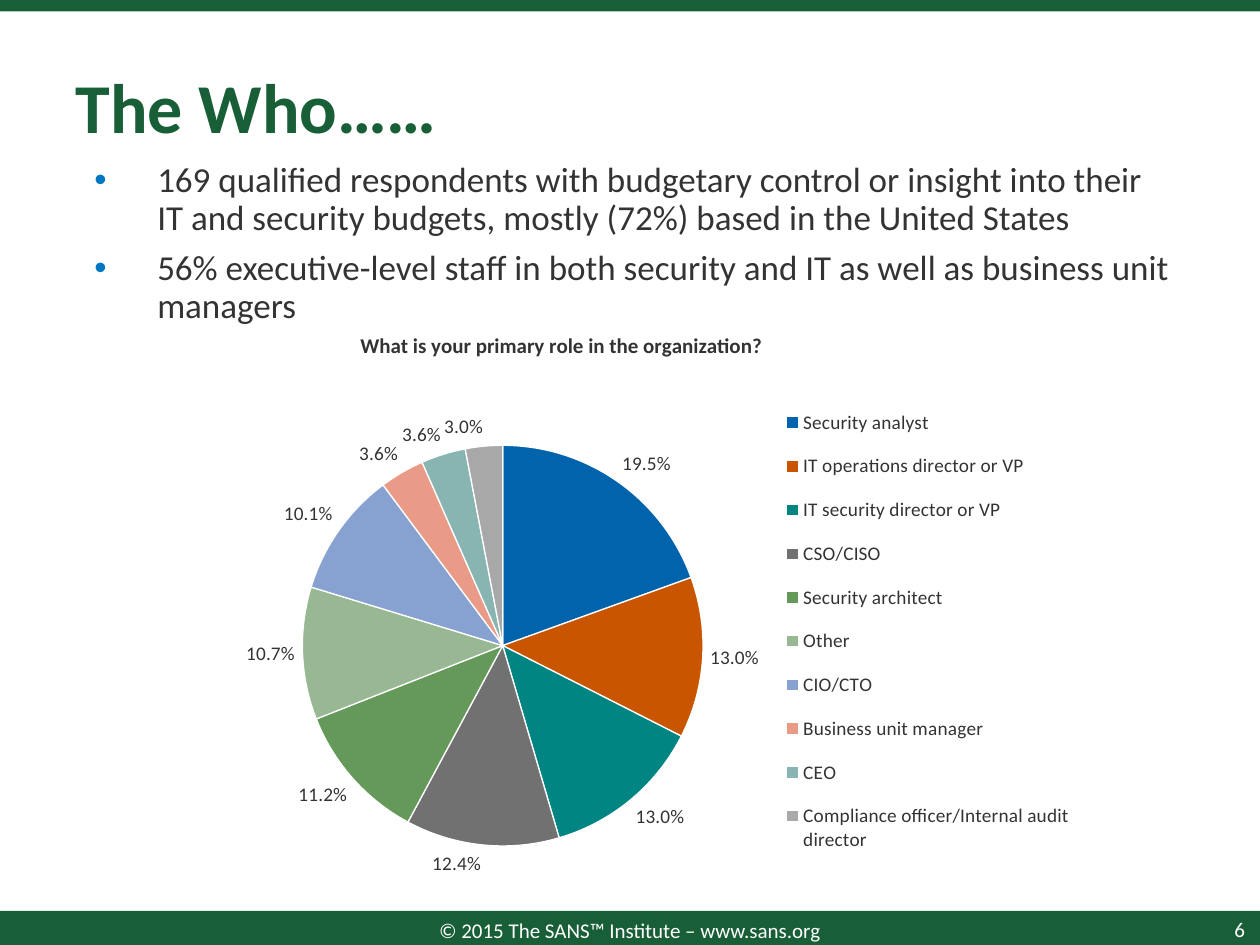
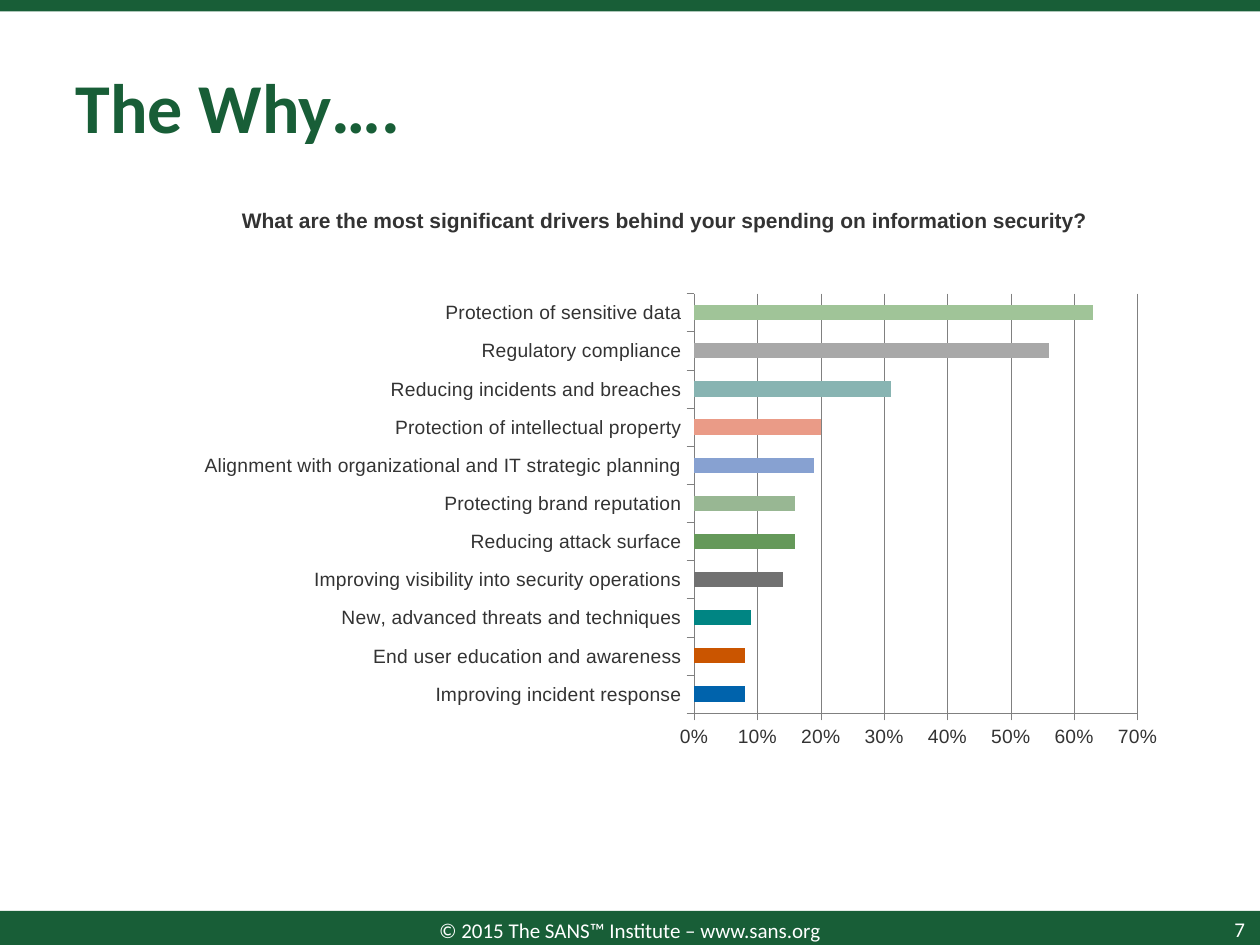
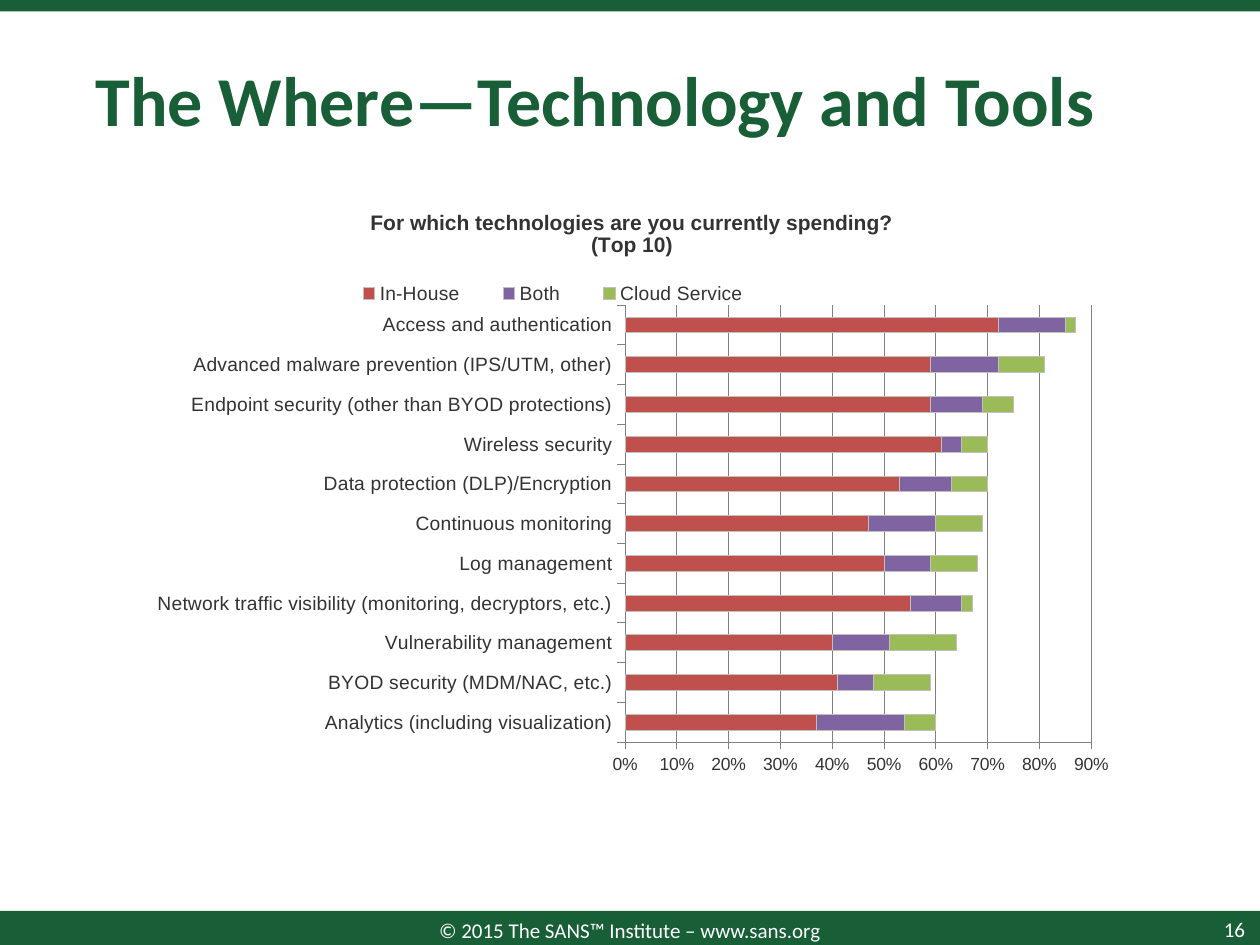
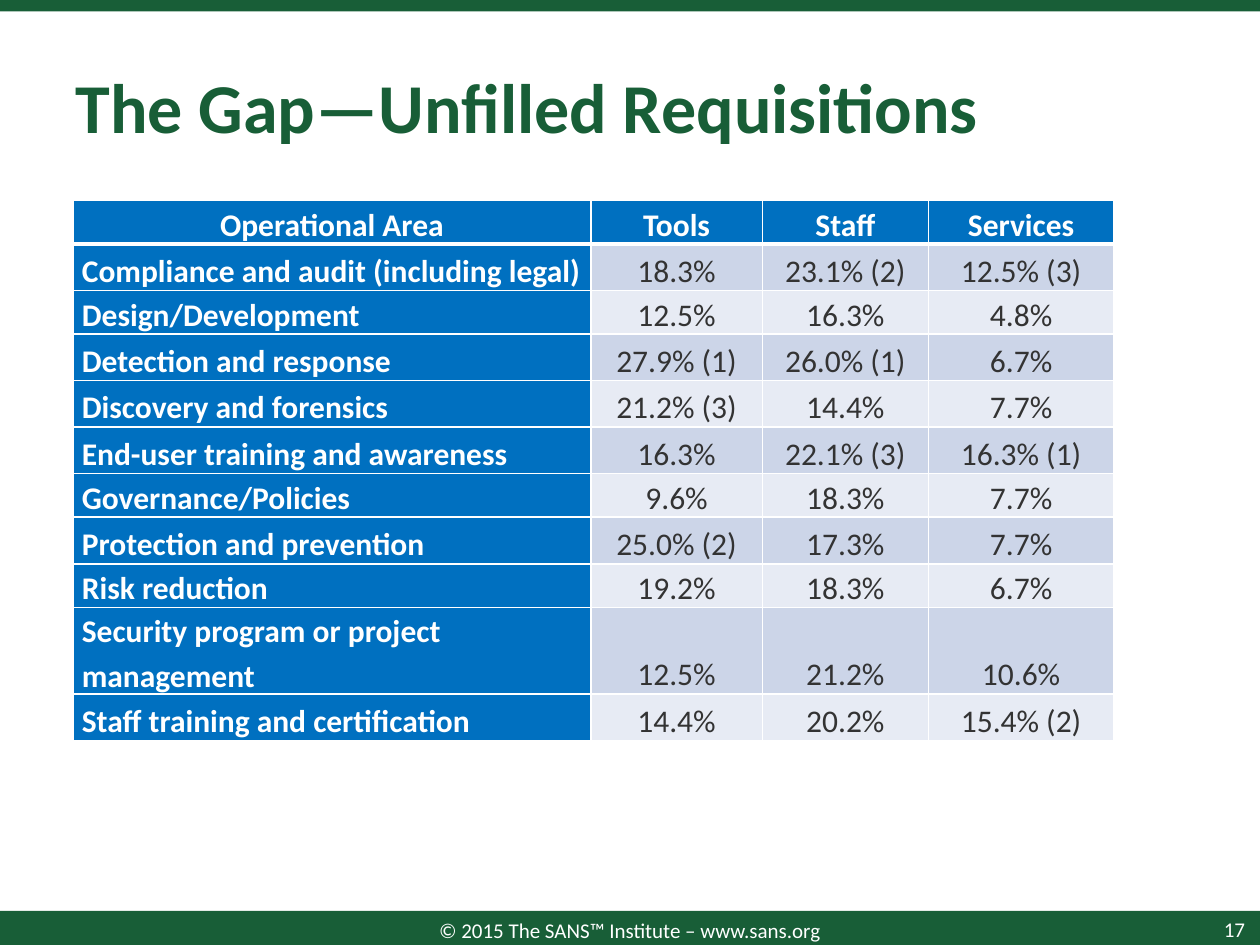
from dataclasses import dataclass
from typing import NamedTuple

from pptx import Presentation
from pptx import util as u
from pptx.chart.data import CategoryChartData
from pptx.dml.color import RGBColor
from pptx.enum import chart as charts
from pptx.enum import shapes, text
from pptx.oxml import parse_xml
from pptx.oxml.ns import nsdecls
from pptx.oxml.xmlchemy import OxmlElement

PX = 9144
GREEN = RGBColor(0x18, 0x5E, 0x37)
WHITE = RGBColor(0xFF, 0xFF, 0xFF)
INK = RGBColor(0x33, 0x33, 0x33)
BULLET_BLUE = RGBColor(0x00, 0x77, 0xC5)
TABLE_BLUE = RGBColor(0x00, 0x70, 0xC0)
ROW_FILLS = (RGBColor(0xCC, 0xD5, 0xE8), RGBColor(0xE7, 0xEB, 0xF4))
AXIS_GREY = RGBColor(0x80, 0x80, 0x80)
OUTLINE_GREY = RGBColor(0xC0, 0xC0, 0xC0)
STACK_COLOURS = tuple(map(RGBColor.from_string, ("C0504D", "8064A2", "9BBB59")))
POINT_COLOURS = tuple(map(RGBColor.from_string, (
    "0063AC", "CA5500", "008583", "717171", "65995A", "98B793",
    "87A1D1", "EA9B87", "88B4B2", "A8A8A8", "A0C498")))
FOOTER = "© 2015 The SANS™ Institute – www.sans.org"


class Box(NamedTuple):
    left: int
    top: int
    width: int = 0
    height: int = 0

    def emu(self) -> list[u.Emu]:
        return [u.Emu(value * PX) for value in self]


TITLE_BOX = Box(50, 30, 900, 107)


@dataclass
class ChartSpec:
    kind: charts.XL_CHART_TYPE
    box: Box
    plot_box: Box
    title: str
    title_box: Box
    font: str
    categories: tuple[str, ...]
    series: dict[str, tuple[float, ...]]
    legend_box: Box | None = None


def style(frame, size: float, colour: RGBColor, bold: bool = False,
          font: str = "Calibri", align=None) -> None:
    for para in frame.paragraphs:
        if align is not None:
            para.alignment = align
        for span in para.runs:
            span.font.size = u.Pt(size)
            span.font.name = font
            span.font.bold = bold
            span.font.color.rgb = colour


def add_text(page, box: Box, words: str, size: float, colour: RGBColor,
             align=text.PP_ALIGN.LEFT, anchor=text.MSO_ANCHOR.MIDDLE):
    frame = page.shapes.add_textbox(*box.emu()).text_frame
    frame.word_wrap = True
    frame.vertical_anchor = anchor
    frame.text = words
    style(frame, size, colour, align=align)
    return frame


def add_band(page, box: Box) -> None:
    band = page.shapes.add_shape(shapes.MSO_SHAPE.RECTANGLE, *box.emu())
    band.shadow.inherit = False
    band.fill.solid()
    band.fill.fore_color.rgb = GREEN
    band.line.fill.background()


def add_page(deck, title: str, number: int, title_box: Box = TITLE_BOX):
    page = deck.slides.add_slide(deck.slide_layouts[5])
    add_band(page, Box(0, 723, 1000, 27))
    add_band(page, Box(0, 0, 1000, 9))
    add_text(page, Box(305, 724, 390, 28), FOOTER, 12, WHITE, text.PP_ALIGN.CENTER)
    add_text(page, Box(904, 723, 94, 28), str(number), 12, WHITE, text.PP_ALIGN.RIGHT)
    holder = page.shapes.title
    holder.left, holder.top, holder.width, holder.height = title_box.emu()
    frame = holder.text_frame
    frame.text = title
    frame.auto_size = text.MSO_AUTO_SIZE.NONE
    frame.vertical_anchor = text.MSO_ANCHOR.MIDDLE
    style(frame, 40, GREEN, True, align=text.PP_ALIGN.LEFT)
    return page


def add_bullet(page, box: Box, words: str) -> None:
    frame = add_text(page, box, words, 20, INK, anchor=text.MSO_ANCHOR.TOP)
    para = frame.paragraphs[0]
    props = para._p.get_or_add_pPr()
    props.set("marL", str(50 * PX))
    props.set("indent", str(-50 * PX))
    props.append(parse_xml(
        f'<a:buClr {nsdecls("a")}><a:srgbClr val="{BULLET_BLUE}"/></a:buClr>'))
    props.append(parse_xml(f'<a:buFont {nsdecls("a")} typeface="Arial"/>'))
    props.append(parse_xml(f'<a:buChar {nsdecls("a")} char="•"/>'))
    para.line_spacing = 0.9


def place(element, part: Box, frame: Box) -> None:
    for old in element.xpath("c:layout"):
        element.remove(old)
    fractions = {
        "x": (part.left - frame.left) / frame.width,
        "y": (part.top - frame.top) / frame.height}
    if part.width:
        fractions |= {"w": part.width / frame.width, "h": part.height / frame.height}
    layout = OxmlElement("c:layout")
    manual = OxmlElement("c:manualLayout")
    layout.append(manual)
    settings = {"xMode": "edge", "yMode": "edge"} | fractions
    if element.tag.endswith("plotArea"):
        settings = {"layoutTarget": "inner"} | settings
    for name, value in settings.items():
        setting = OxmlElement(f"c:{name}")
        setting.set("val", str(value))
        manual.append(setting)
    before = element.xpath("c:tx | c:legendPos")
    if before:
        before[-1].addnext(layout)
    else:
        element.insert(0, layout)


def outline(line, colour: RGBColor, width: float) -> None:
    line.color.rgb = colour
    line.width = u.Pt(width)


def paint(item, colour: RGBColor) -> None:
    item.format.fill.solid()
    item.format.fill.fore_color.rgb = colour


def set_font(font, size: float, name: str) -> None:
    font.size = u.Pt(size)
    font.name = name
    font.color.rgb = INK


def add_chart(page, spec: ChartSpec):
    data = CategoryChartData(number_format="0%")
    data.categories = spec.categories
    for name, values in spec.series.items():
        data.add_series(name, values)
    chart = page.shapes.add_chart(spec.kind, *spec.box.emu(), data).chart
    set_font(chart.font, 10, spec.font)
    chart.has_title = True
    chart.chart_title.include_in_layout = False
    chart.chart_title.text_frame.text = spec.title
    style(chart.chart_title.text_frame, 12, INK, True, spec.font)
    root = chart._chartSpace
    place(root.xpath("c:chart/c:title")[0], spec.title_box, spec.box)
    place(root.xpath("c:chart/c:plotArea")[0], spec.plot_box, spec.box)
    chart.has_legend = spec.legend_box is not None
    if spec.legend_box:
        chart.legend.position = charts.XL_LEGEND_POSITION.RIGHT
        chart.legend.include_in_layout = False
        set_font(chart.legend.font, 11, spec.font)
        place(root.xpath("c:chart/c:legend")[0], spec.legend_box, spec.box)
    return chart


def paint_points(series) -> None:
    for index, _ in enumerate(series.values):
        paint(series.points[index], POINT_COLOURS[index])


def add_pie(page, spec: ChartSpec) -> None:
    plot = add_chart(page, spec).plots[0]
    plot.vary_by_categories = True
    series = plot.series[0]
    paint_points(series)
    for index, _ in enumerate(series.values):
        outline(series.points[index].format.line, WHITE, 0.75)
    plot.has_data_labels = True
    labels = plot.data_labels
    labels.show_value = True
    labels.show_percentage = False
    labels.number_format = "0.0%"
    labels.number_format_is_linked = False
    labels.position = charts.XL_LABEL_POSITION.OUTSIDE_END
    set_font(labels.font, 11, spec.font)


def add_bars(page, spec: ChartSpec, maximum: float, scale_size: float):
    chart = add_chart(page, spec)
    plot = chart.plots[0]
    plot.vary_by_categories = False
    plot.gap_width = 150
    for axis, size in ((chart.category_axis, 11), (chart.value_axis, scale_size)):
        axis.major_tick_mark = charts.XL_TICK_MARK.OUTSIDE
        axis.minor_tick_mark = charts.XL_TICK_MARK.NONE
        outline(axis.format.line, AXIS_GREY, 0.25)
        set_font(axis.tick_labels.font, size, spec.font)
    scale = chart.value_axis
    scale.minimum_scale, scale.maximum_scale, scale.major_unit = 0, maximum, 0.1
    scale.has_major_gridlines = True
    outline(scale.major_gridlines.format.line, AXIS_GREY, 0.25)
    scale.tick_labels.number_format = "0%"
    scale.tick_labels.number_format_is_linked = False
    return plot


def border_cell(cell, bottom_width: float) -> None:
    props = cell._tc.get_or_add_tcPr()
    for side in "LRTB":
        width = u.Pt(bottom_width if side == "B" else 1)
        props.append(parse_xml(
            f'<a:ln{side} {nsdecls("a")} w="{width}"><a:solidFill>'
            f'<a:srgbClr val="{WHITE}"/></a:solidFill></a:ln{side}>'))


def add_gap_table(page, box: Box, widths: tuple[int, ...], heights: tuple[int, ...],
                  rows: tuple[tuple[str, ...], ...]) -> None:
    table = page.shapes.add_table(len(rows), len(widths), *box.emu()).table
    for column, width in zip(table.columns, widths):
        column.width = u.Emu(width * PX)
    for row, height in zip(table.rows, heights):
        row.height = u.Emu(height * PX)
    for r, row in enumerate(rows):
        for c, words in enumerate(row):
            cell = table.cell(r, c)
            is_header, is_area = r == 0, c == 0
            strong = is_header or is_area
            border_cell(cell, 3 if is_header else 1)
            cell.fill.solid()
            cell.fill.fore_color.rgb = TABLE_BLUE if strong else ROW_FILLS[(r - 1) % 2]
            cell.margin_left = cell.margin_right = u.Emu(7 * PX)
            cell.margin_top = cell.margin_bottom = 0
            cell.vertical_anchor = (
                text.MSO_ANCHOR.MIDDLE if is_header else text.MSO_ANCHOR.BOTTOM)
            cell.text_frame.text = words
            align = (text.PP_ALIGN.LEFT if is_area and not is_header
                     else text.PP_ALIGN.CENTER)
            style(cell.text_frame, 18, WHITE if strong else INK, strong, align=align)
            cell.text_frame.paragraphs[0].line_spacing = 1.15


ROLES = ChartSpec(
    charts.XL_CHART_TYPE.PIE, Box(175, 252, 681, 471), Box(240, 343, 318, 339),
    "What is your primary role in the organization?", Box(283, 260), "Calibri",
    ("Security analyst", "IT operations director or VP",
     "IT security director or VP", "CSO/CISO", "Security architect", "Other",
     "CIO/CTO", "Business unit manager", "CEO",
     "Compliance officer/Internal audit director"),
    {"Series 1": (0.195, 0.13, 0.13, 0.124, 0.112, 0.107, 0.101, 0.036, 0.036, 0.03)},
    Box(617, 310, 240, 382))

DRIVERS = ChartSpec(
    charts.XL_CHART_TYPE.BAR_CLUSTERED, Box(26, 137, 903, 499), Box(551, 233, 352, 333),
    "What are the most significant drivers behind your spending on information security?",
    Box(189, 162), "Arial",
    ("Improving incident response", "End user education and awareness",
     "New, advanced threats and techniques",
     "Improving visibility into security operations", "Reducing attack surface",
     "Protecting brand reputation",
     "Alignment with organizational and IT strategic planning",
     "Protection of intellectual property", "Reducing incidents and breaches",
     "Regulatory compliance", "Protection of sensitive data"),
    {"Series 1": (0.08, 0.08, 0.09, 0.14, 0.16, 0.16, 0.19, 0.2, 0.31, 0.56, 0.63)})

TECHNOLOGIES = ChartSpec(
    charts.XL_CHART_TYPE.BAR_STACKED, Box(11, 151, 939, 535), Box(496, 242, 370, 347),
    "For which technologies are you currently spending?\n(Top 10)",
    Box(291, 163), "Arial",
    ("Analytics (including visualization)", "BYOD security (MDM/NAC, etc.)",
     "Vulnerability management",
     "Network traffic visibility (monitoring, decryptors, etc.)", "Log management",
     "Continuous monitoring", "Data protection (DLP)/Encryption",
     "Wireless security", "Endpoint security (other than BYOD protections)",
     "Advanced malware prevention (IPS/UTM, other)", "Access and authentication"),
    {"In-House": (0.37, 0.41, 0.4, 0.55, 0.5, 0.47, 0.53, 0.61, 0.59, 0.59, 0.72),
     "Both": (0.17, 0.07, 0.11, 0.1, 0.09, 0.13, 0.1, 0.04, 0.1, 0.13, 0.13),
     "Cloud Service": (0.06, 0.11, 0.13, 0.02, 0.09, 0.09, 0.07, 0.05, 0.06, 0.09, 0.02)},
    Box(259, 222, 360, 22))

REQUISITIONS = (
    ("Operational Area", "Tools", "Staff", "Services"),
    ("Compliance and audit (including legal)", "18.3%", "23.1% (2)", "12.5% (3)"),
    ("Design/Development", "12.5%", "16.3%", "4.8%"),
    ("Detection and response", "27.9% (1)", "26.0% (1)", "6.7%"),
    ("Discovery and forensics", "21.2% (3)", "14.4%", "7.7%"),
    ("End-user training and awareness", "16.3%", "22.1% (3)", "16.3% (1)"),
    ("Governance/Policies", "9.6%", "18.3%", "7.7%"),
    ("Protection and prevention", "25.0% (2)", "17.3%", "7.7%"),
    ("Risk reduction", "19.2%", "18.3%", "6.7%"),
    ("Security program or project management", "12.5%", "21.2%", "10.6%"),
    ("Staff training and certification", "14.4%", "20.2%", "15.4% (2)"))


def main() -> None:
    deck = Presentation()
    deck.slide_width, deck.slide_height = u.Emu(1000 * PX), u.Emu(750 * PX)

    page = add_page(deck, "The Who……", 6)
    add_bullet(page, Box(65, 124, 864, 71),
               "169 qualified respondents with budgetary control or insight into "
               "their IT and security budgets, mostly (72%) based in the United States")
    add_bullet(page, Box(65, 194, 907, 71),
               "56% executive-level staff in both security and IT as well as "
               "business unit managers")
    add_pie(page, ROLES)

    page = add_page(deck, "The Why….", 7)
    paint_points(add_bars(page, DRIVERS, 0.7, 11).series[0])

    page = add_page(deck, "The Where—Technology and Tools", 16, Box(66, 25, 900, 107))
    plot = add_bars(page, TECHNOLOGIES, 0.9, 10)
    plot.overlap = 100
    for series, colour in zip(plot.series, STACK_COLOURS):
        paint(series, colour)
        outline(series.format.line, OUTLINE_GREY, 0.25)

    page = add_page(deck, "The Gap—Unfilled Requisitions", 17)
    add_gap_table(page, Box(58, 159, 826, 427), (411, 136, 132, 147),
                  (32, 37, 32, 37, 37, 37, 32, 37, 32, 32, 37), REQUISITIONS)

    deck.save("out.pptx")


if __name__ == "__main__":
    main()
